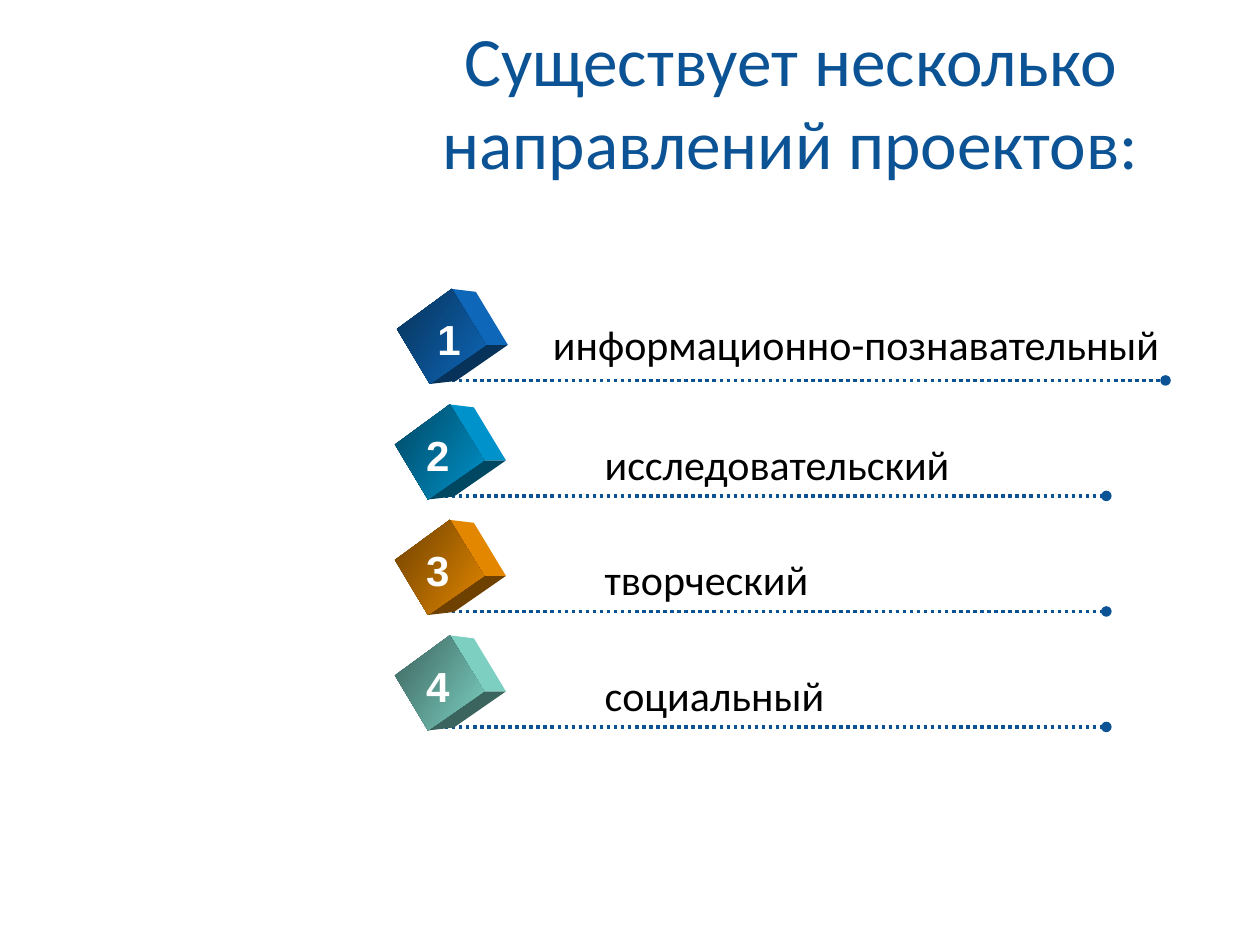
from dataclasses import dataclass

from lxml.etree import SubElement
from pptx import Presentation
from pptx.dml.color import RGBColor
from pptx.enum.dml import MSO_LINE_DASH_STYLE as Dash
from pptx.enum.shapes import MSO_CONNECTOR as Connector
from pptx.enum.text import MSO_ANCHOR as Anchor, MSO_AUTO_SIZE as AutoSize, PP_ALIGN as Align
from pptx.oxml.ns import qn
from pptx.slide import Slide
from pptx.text.text import TextFrame
from pptx.util import Pt

NAVY = RGBColor(0x0B, 0x53, 0x94)
BLACK = RGBColor(0, 0, 0)
WHITE = RGBColor(0xFF, 0xFF, 0xFF)
BLUE = RGBColor(0x0F, 0x6F, 0xC6)
CYAN = RGBColor(0x00, 0x9D, 0xD9)
ORANGE = RGBColor(0xF4, 0x91, 0x00)
MINT = RGBColor(0x85, 0xDF, 0xD0)

TITLE_SIZE = 39.6
ROW_PITCH = 66
RULE_TOP = 217.4
RULE_LEFT = 254.2
CUBE_TOP = 165.1
NUMBER_TOP = 175.7
TEXT_HEIGHT = 36

# Corners of the visible cube faces, from the top left of the cube
FRONT = [(0, 22.9), (31.4, 0), (50.9, 32), (18.9, 54.3)]
SIDE = [(31.4, 0), (45.1, 1.7), (63.4, 32), (50.9, 32)]
BASE = [(18.9, 54.3), (50.9, 32), (63.4, 32), (33.7, 52.6)]


@dataclass(frozen=True)
class Direction:
    name: str
    color: RGBColor
    name_width: float
    name_left: float = 338.4
    name_top: float = 181
    cube_left: float = 225.7
    number_left: float = 236.2
    rule_right: float = 632.2


DIRECTIONS = [
    Direction("информационно-познавательный", BLUE, 386, name_left=308.9, name_top=178.6,
              cube_left=226.8, number_left=242.6, rule_right=666),
    Direction("исследовательский", CYAN, 226.8),
    Direction("творческий", ORANGE, 139.7),
    Direction("социальный", MINT, 140.4),
]


def shade(color: RGBColor, factor: float) -> RGBColor:
    return RGBColor(*(round(channel * factor) for channel in color))


def write(frame: TextFrame, text: str, *, size: float, color: RGBColor, font: str = "Calibri",
          bold: bool = False, align: Align = Align.LEFT, anchor: Anchor = Anchor.TOP) -> None:
    frame.word_wrap = True
    frame.auto_size = AutoSize.NONE
    frame.vertical_anchor = anchor
    paragraph = frame.paragraphs[0]
    paragraph.text = text
    paragraph.alignment = align
    for run in paragraph.runs:
        run.font.name = font
        run.font.size = Pt(size)
        run.font.bold = bold
        run.font.color.rgb = color


def add_text(slide: Slide, left: float, top: float, width: float, text: str, **style) -> None:
    box = slide.shapes.add_textbox(Pt(left), Pt(top), Pt(width), Pt(TEXT_HEIGHT))
    write(box.text_frame, text, size=24, **style)


def add_rule(slide: Slide, right: float, top: float) -> None:
    """Draw a dotted line that ends in a round dot."""
    rule = slide.shapes.add_connector(Connector.STRAIGHT, Pt(RULE_LEFT), Pt(top), Pt(right), Pt(top))
    rule.line.color.rgb = NAVY
    rule.line.width = Pt(2)
    rule.line.dash_style = Dash.ROUND_DOT
    SubElement(rule.line._get_or_add_ln(), qn("a:tailEnd"), type="oval")
    SubElement(rule._element.spPr, qn("a:effectLst"))


def add_face(slide: Slide, left: float, top: float, corners: list[tuple[float, float]],
             start: RGBColor, end: RGBColor) -> None:
    """Draw one cube face, shaded from start at upper left to end at lower right."""
    points = [(Pt(left + x), Pt(top + y)) for x, y in corners]
    builder = slide.shapes.build_freeform(*points[0])
    builder.add_line_segments(points[1:], close=True)
    face = builder.convert_to_shape()
    face.shadow.inherit = False
    face.line.fill.background()
    if start == end:
        face.fill.solid()
        face.fill.fore_color.rgb = start
        return
    face.fill.gradient()
    face.fill.gradient_angle = 327
    for stop, color in zip(face.fill.gradient_stops, (start, end)):
        stop.color.rgb = color


def add_cube(slide: Slide, left: float, top: float, color: RGBColor) -> None:
    dark, bright = shade(color, 0.45), shade(color, 0.93)
    add_face(slide, left, top, BASE, dark, dark)
    add_face(slide, left, top, SIDE, bright, bright)
    add_face(slide, left, top, FRONT, dark, bright)


def add_direction(slide: Slide, index: int, direction: Direction) -> None:
    shift = index * ROW_PITCH
    add_rule(slide, direction.rule_right, RULE_TOP + shift)
    add_cube(slide, direction.cube_left, CUBE_TOP + shift, direction.color)
    add_text(slide, direction.number_left, NUMBER_TOP + shift, 28, str(index + 1),
             color=WHITE, font="Arial", bold=True, align=Align.CENTER)
    add_text(slide, direction.name_left, direction.name_top + shift, direction.name_width,
             direction.name, color=BLACK)


def add_title(slide: Slide) -> None:
    title = slide.shapes.title
    title.left, title.top, title.width, title.height = Pt(196.6), Pt(25.9), Pt(510.5), Pt(110.2)
    write(title.text_frame, "Существует несколько направлений проектов:\v", size=TITLE_SIZE,
          color=NAVY, align=Align.CENTER, anchor=Anchor.MIDDLE)
    # The open last line takes its height from the end-of-paragraph size
    SubElement(title.text_frame.paragraphs[0]._p, qn("a:endParaRPr"), sz=str(round(TITLE_SIZE * 100)))


def main() -> None:
    deck = Presentation()
    deck.slide_width, deck.slide_height = Pt(720), Pt(540)
    slide = deck.slides.add_slide(deck.slide_layouts[5])
    add_title(slide)
    for index, direction in enumerate(DIRECTIONS):
        add_direction(slide, index, direction)
    deck.save("out.pptx")


if __name__ == "__main__":
    main()
